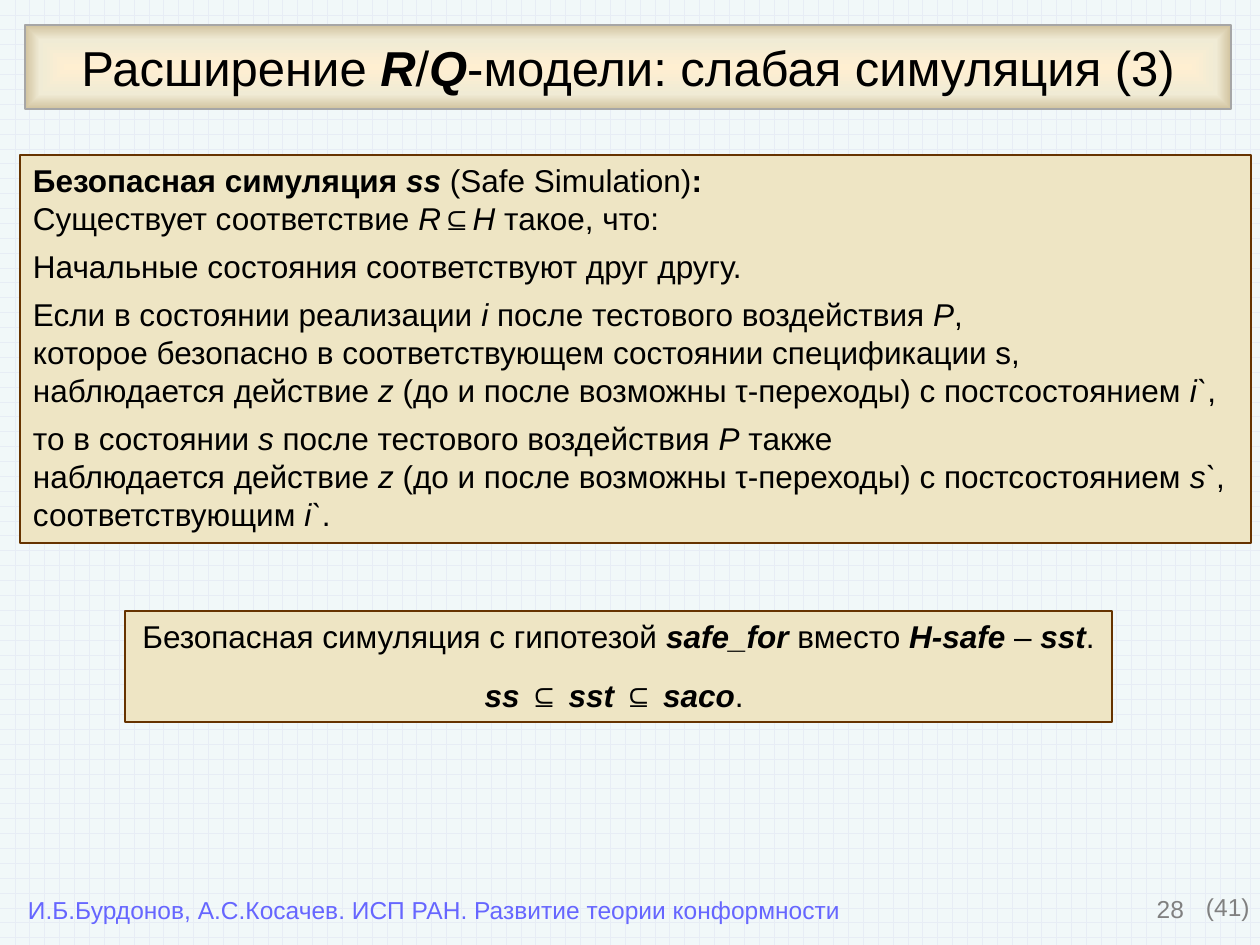
from dataclasses import dataclass

from lxml.etree import SubElement
from pptx import Presentation
from pptx.dml.color import RGBColor
from pptx.enum.dml import MSO_PATTERN
from pptx.enum.shapes import MSO_SHAPE
from pptx.enum.text import MSO_ANCHOR, MSO_AUTO_SIZE, PP_ALIGN
from pptx.oxml.ns import qn
from pptx.util import Emu, Pt

SCALE = 914400 / 126
LEFT, CENTER, RIGHT = PP_ALIGN.LEFT, PP_ALIGN.CENTER, PP_ALIGN.RIGHT
Z_EVENT = [("z ", "i"), ("(до и после возможны τ-переходы) с постсостоянием ", "")]


@dataclass(frozen=True)
class Para:
    runs: list
    before: int = 0
    align: PP_ALIGN = LEFT


@dataclass(frozen=True)
class Block:
    box: tuple
    paras: list
    size: int
    color: str = "000000"
    fill: str = ""
    line: str = ""
    inset: tuple = (13, 6)
    wrap: bool = False
    grow: bool = True
    anchor: MSO_ANCHOR = MSO_ANCHOR.TOP


TITLE = Block((25, 25, 1206, 84), [Para([
    ("Расширение ", ""), ("R", "bi"), ("/", ""), ("Q", "bi"),
    ("-модели: слабая симуляция (3)", ""),
], align=CENTER)], 28, line="A6A6A6", inset=(13, 13), grow=False,
    anchor=MSO_ANCHOR.MIDDLE)

DEFINITION = Block((20, 155, 1231, 388), [
    Para([("Безопасная симуляция ", "b"), ("ss", "bi"),
          (" (Safe Simulation)", ""), (":", "b")], 12),
    Para([("Существует соответствие ", ""), ("R", "i"), ("⊆", ""),
          ("H", "i"), (" такое, что:", "")]),
    Para([("Начальные состояния соответствуют друг другу.", "")], 6),
    Para([("Если в состоянии реализации ", ""), ("i", "i"),
          (" после тестового воздействия ", ""), ("P", "i"),
          (",\nкоторое безопасно в соответствующем состоянии спецификации s,"
           "\nнаблюдается действие ", ""),
          *Z_EVENT, ("i`", "i"), (",", "")], 6),
    Para([("то в состоянии ", ""), ("s ", "i"),
          ("после тестового воздействия ", ""), ("P", "i"),
          (" также\nнаблюдается действие ", ""),
          *Z_EVENT, ("s`", "i"), (",\nсоответствующим ", ""),
          ("i`", "i"), (".", "")], 6),
], 18, fill="EEE5C4", line="663300")

CONCLUSION = Block((125, 611, 987, 111), [
    Para([("Безопасная симуляция с гипотезой ", ""), ("safe_for ", "bi"),
          ("вместо ", ""), ("H-safe ", "bi"), ("– ", ""),
          ("sst", "bi"), (".", "")], 12, CENTER),
    Para([("ss ", "bi"), ("⊆ ", ""), ("sst", "bi"), (" ⊆ ", ""),
          ("saco", "bi"), (". ", "")], 12, CENTER),
], 18, fill="EEE5C4", line="663300")

FOOTERS = [
    Block((903, 888, 294, 66), [Para([("28", "")], align=RIGHT)], 14,
          "808080", wrap=True, grow=False),
    Block((1206, 892, 44, 29), [Para([("(41)", "")])], 14, "808080",
          inset=(0, 0)),
    Block((28, 895, 818, 30), [Para([(
        "И.Б.Бурдонов, А.С.Косачев. ИСП РАН. Развитие теории конформности",
        "")])], 14, "6666FF", inset=(0, 0)),
]


def px(n: int) -> Emu:
    return Emu(round(n * SCALE))


def rgb(value: str) -> RGBColor:
    return RGBColor.from_string(value)


def apply(target, values: dict) -> None:
    for name, value in values.items():
        setattr(target, name, value)


def write_para(p, para: Para, block: Block) -> None:
    apply(p, {"alignment": para.align, "space_before": Pt(para.before)})
    for text, style in para.runs:
        for i, piece in enumerate(text.split("\n")):
            if i:
                p.add_line_break()
            r = p.add_run()
            r.text = piece
            apply(r.font, {"name": "Arial", "size": Pt(block.size),
                           "bold": "b" in style, "italic": "i" in style})
            r.font.color.rgb = rgb(block.color)


def draw_block(s, block: Block):
    box = [px(n) for n in block.box]
    if block.line:
        sp = s.shapes.add_shape(MSO_SHAPE.RECTANGLE, *box)
        sp.shadow.inherit = False
        sp.line.color.rgb = rgb(block.line)
        sp.line.width = Pt(0.75)
    else:
        sp = s.shapes.add_textbox(*box)
    if block.fill:
        sp.fill.solid()
        sp.fill.fore_color.rgb = rgb(block.fill)
    tf = sp.text_frame
    x, y = (px(n) for n in block.inset)
    apply(tf, {
        "margin_left": x, "margin_right": x, "margin_top": y,
        "margin_bottom": y, "word_wrap": block.wrap,
        "vertical_anchor": block.anchor,
        "auto_size": (MSO_AUTO_SIZE.SHAPE_TO_FIT_TEXT if block.grow
                      else MSO_AUTO_SIZE.NONE),
    })
    for i, para in enumerate(block.paras):
        p = tf.add_paragraph() if i else tf.paragraphs[0]
        write_para(p, para, block)
    return sp


def fill_from_centre(sp, stops: list) -> None:
    sp.fill.gradient()
    grad = sp.element.spPr.find(qn("a:gradFill"))
    for child in list(grad):
        grad.remove(child)
    gs_list = SubElement(grad, qn("a:gsLst"))
    for pos, color in stops:
        gs = SubElement(gs_list, qn("a:gs"), pos=str(pos * 1000))
        SubElement(gs, qn("a:srgbClr"), val=color)
    shade = SubElement(grad, qn("a:path"), {"path": "rect"})
    SubElement(shade, qn("a:fillToRect"), dict.fromkeys("ltrb", "50000"))


def main() -> None:
    """Build the weak simulation slide and save it."""
    prs = Presentation()
    apply(prs, {"slide_width": px(1260), "slide_height": px(945)})
    s = prs.slides.add_slide(prs.slide_layouts[6])
    bg = s.background.fill
    bg.patterned()
    bg.pattern = MSO_PATTERN.HORIZONTAL_BRICK
    bg.fore_color.rgb = rgb("E7EDF5")
    bg.back_color.rgb = rgb("F1F8F9")
    for footer in FOOTERS:
        draw_block(s, footer)
    fill_from_centre(draw_block(s, TITLE),
                     [(0, "FFEFD1"), (65, "F0EBD5"), (100, "D1C39F")])
    for block in (DEFINITION, CONCLUSION):
        draw_block(s, block)
    prs.save("out.pptx")


if __name__ == "__main__":
    main()
